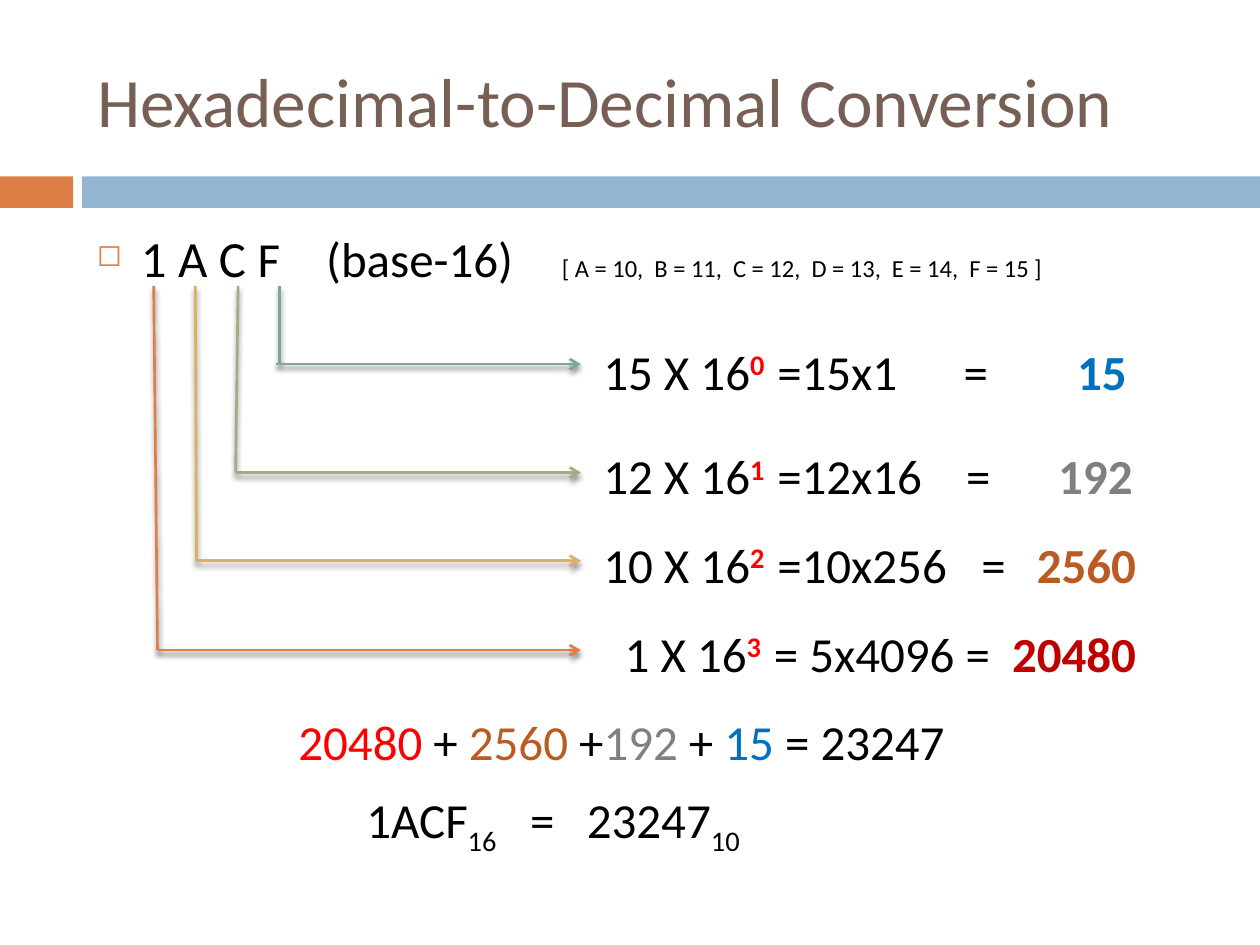
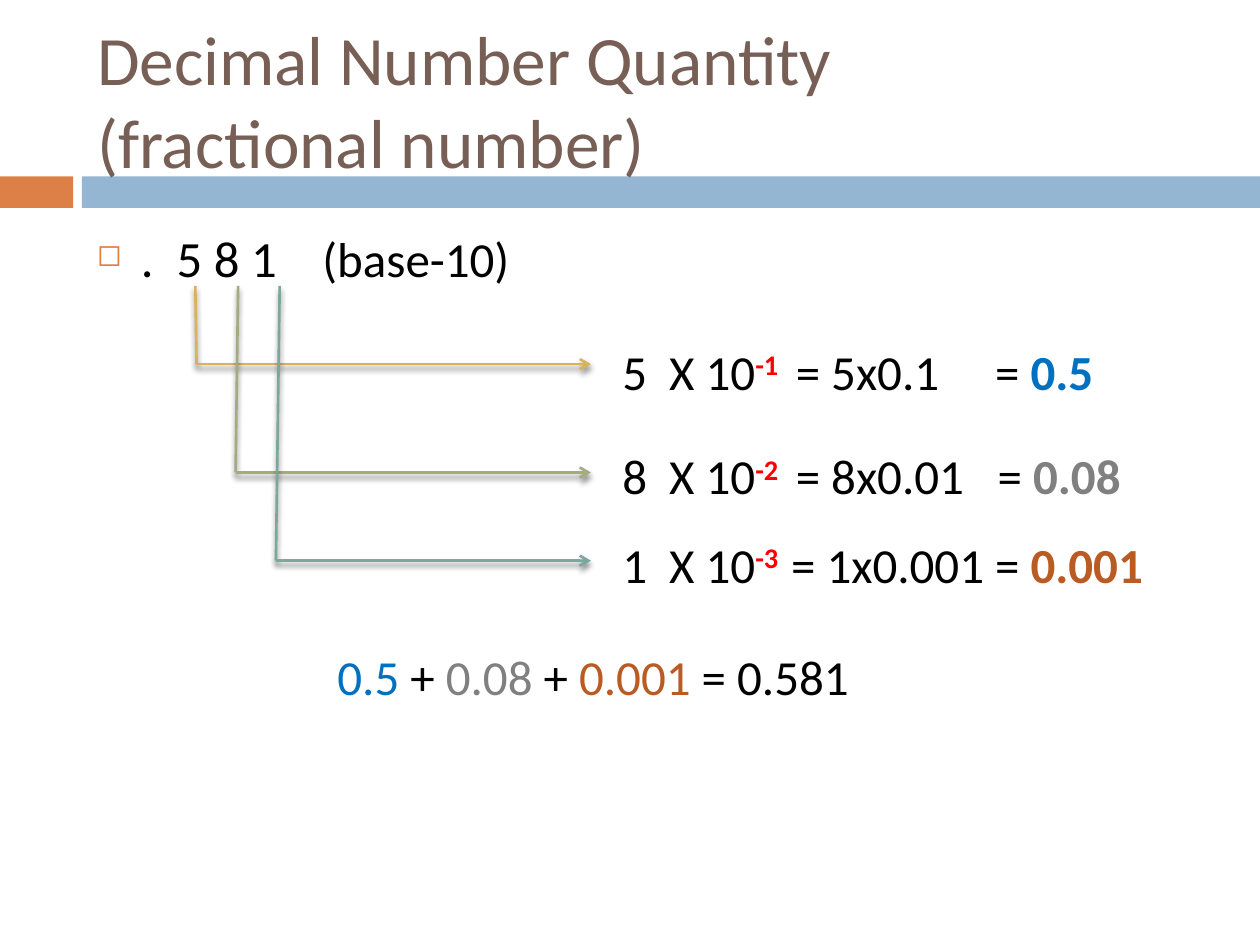
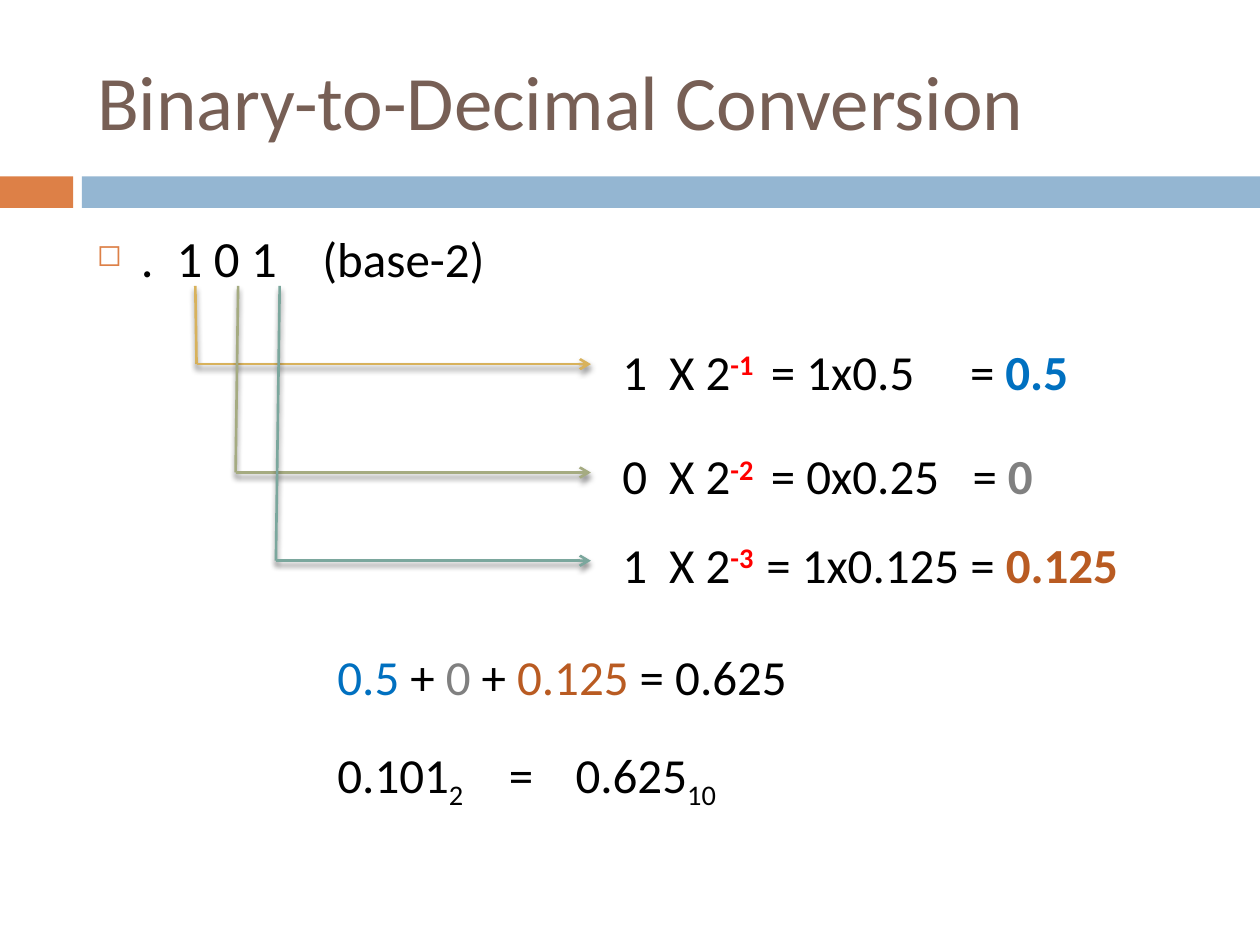
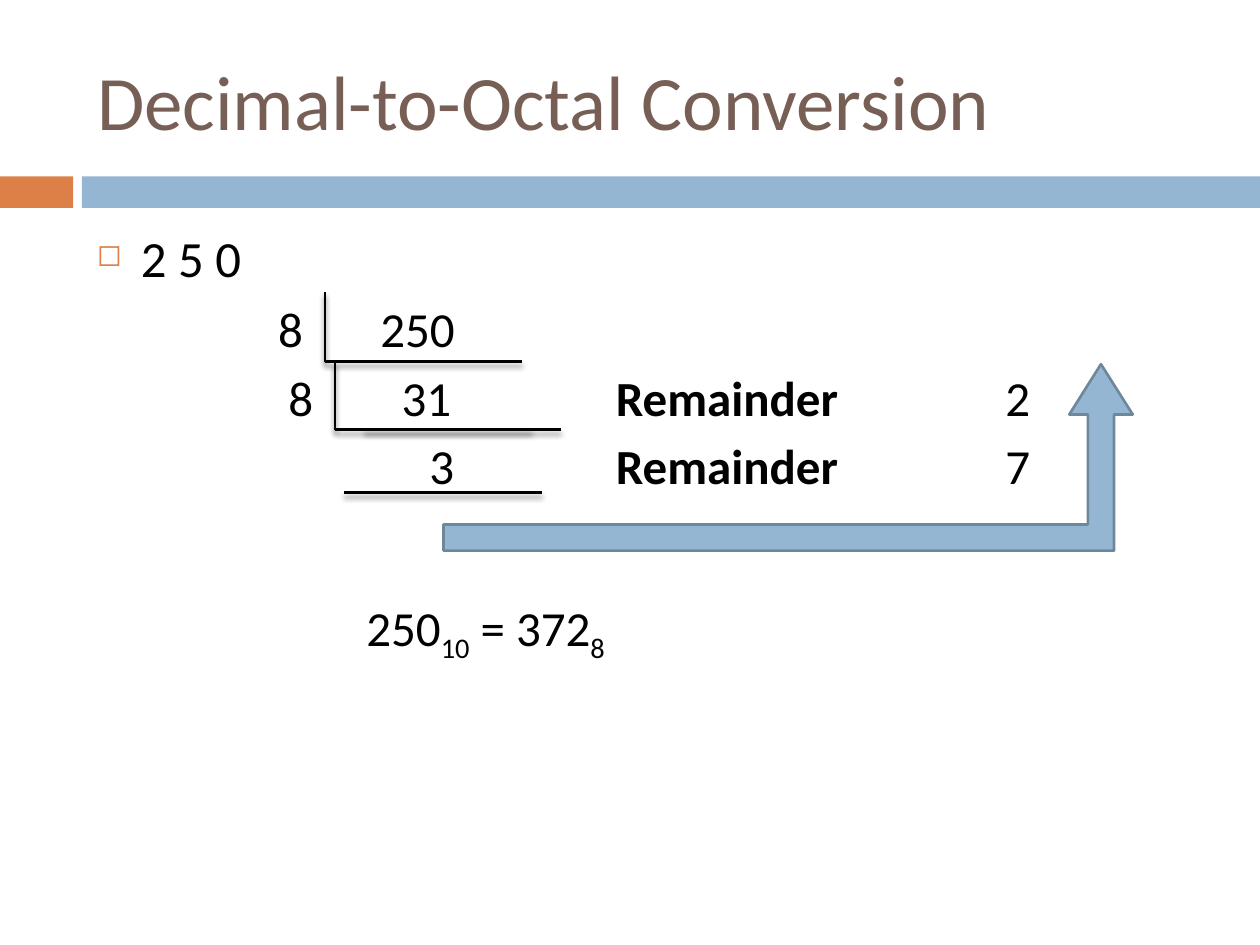
"""Builds four slides on converting numbers between bases."""
from dataclasses import dataclass
from typing import Any, NamedTuple

import lxml.etree
import pptx
import pptx.dml.color
import pptx.enum.shapes
import pptx.enum.text
import pptx.oxml.ns
import pptx.util

Inches = pptx.util.Inches
Pt = pptx.util.Pt
SHAPES = pptx.enum.shapes.MSO_SHAPE
FIT = pptx.enum.text.MSO_AUTO_SIZE


@dataclass(frozen=True)
class Theme:
    font: str = "Calibri"
    title: str = "775F55"
    ink: str = "000000"
    orange: str = "DD8047"
    blue: str = "94B6D2"
    blue_edge: str = "6D879B"
    gold: str = "D8B25C"
    olive: str = "A5AB81"
    teal: str = "7BA79D"
    power: str = "FF0000"
    azure: str = "0070C0"
    gray: str = "808080"
    rust: str = "B95B22"
    crimson: str = "C00000"
    title_size: float = 44
    title_fitted: float = 39.6
    digits_size: float = 29
    text_size: float = 28
    note_size: float = 14
    line_width: float = 1.5


THEME = Theme()


class Span(NamedTuple):
    text: str
    color: str = THEME.ink
    bold: bool = False
    baseline: int = 0
    size: float = THEME.text_size


class Block(NamedTuple):
    left: float
    top: float
    width: float
    spans: list[Span]
    tabs: tuple[float, ...] = ()
    indent: float = 0
    height: float = 0.57


class Column(NamedTuple):
    color: str
    head: float
    foot: float
    overhang: float = 0


class Level(NamedTuple):
    line: float
    text: float


class Term(NamedTuple):
    column: Column
    factor: str
    power: str
    product: str
    result: str
    color: str
    tabs: tuple[float, ...] = ()
    shift: float = 0


class Segment(NamedTuple):
    start: tuple[float, float]
    end: tuple[float, float]


ORANGE = Column(THEME.orange, 1.22, 1.25)
GOLD = Column(THEME.gold, 1.55, 1.56)
OLIVE = Column(THEME.olive, 1.89, 1.87)
TEAL = Column(THEME.teal, 2.22, 2.19)
TEAL_UPRIGHT = TEAL._replace(foot=2.22, overhang=0.03)
LEVELS = (Level(2.89, 2.66), Level(3.75, 3.49), Level(4.45, 4.19), Level(5.16, 4.9))
COLUMN_TOP = 2.27


def assign(target: Any, values: dict[str, Any]) -> None:
    """Set each named attribute of the target."""
    for name, value in values.items():
        setattr(target, name, value)


def rgb(color: str) -> pptx.dml.color.RGBColor:
    """Turn a hex string into a colour."""
    return pptx.dml.color.RGBColor.from_string(color)


def child(parent: Any, tag: str, **attributes: Any) -> Any:
    """Append a DrawingML element to its parent."""
    values = {name: str(value) for name, value in attributes.items()}
    return lxml.etree.SubElement(parent, pptx.oxml.ns.qn(f"a:{tag}"), values)


def write(para: Any, spans: list[Span]) -> None:
    """Write formatted spans into a paragraph."""
    for part in spans:
        span = para.add_run()
        span.text = part.text
        assign(span.font, {"name": THEME.font, "size": Pt(part.size), "bold": part.bold})
        span.font.color.rgb = rgb(part.color)
        if part.baseline:
            span.font._element.set("baseline", str(part.baseline * 1000))


def add_tabs(para: Any, tabs: tuple[float, ...]) -> None:
    """Give a paragraph left tab stops."""
    if tabs:
        stops = child(para._p.get_or_add_pPr(), "tabLst")
        for position in tabs:
            child(stops, "tab", pos=Inches(position), algn="l")


def add_block(page: Any, block: Block) -> None:
    """Add a one-paragraph text box."""
    box = page.shapes.add_textbox(*map(Inches, (block.left, block.top, block.width, block.height)))
    assign(box.text_frame, {"word_wrap": True, "auto_size": FIT.SHAPE_TO_FIT_TEXT})
    para = box.text_frame.paragraphs[0]
    if block.indent:
        para._p.get_or_add_pPr().set("marL", str(Inches(block.indent)))
    add_tabs(para, block.tabs)
    write(para, block.spans)


def add_heading(page: Any, spans: list[Span], tabs: tuple[float, ...] = ()) -> None:
    """Add the bulleted number that the slide works on."""
    box = page.shapes.add_textbox(Inches(0.67), Inches(1.75), Inches(8.92), Inches(4.92))
    assign(box.text_frame, {"word_wrap": True, "auto_size": FIT.NONE})
    para = box.text_frame.paragraphs[0]
    para.space_before = Pt(7)
    properties = para._p.get_or_add_pPr()
    properties.set("marL", str(Inches(0.35)))
    properties.set("indent", str(-Inches(0.35)))
    child(child(properties, "buClr"), "srgbClr", val=THEME.orange)
    child(properties, "buSzPct", val=60000)
    child(properties, "buChar", char="◻")
    add_tabs(para, tabs)
    write(para, spans)


def add_line(page: Any, segment: Segment, color: str = THEME.ink, arrow: bool = False) -> None:
    """Add a line with a soft shadow below it."""
    line = page.shapes.add_connector(
        pptx.enum.shapes.MSO_CONNECTOR.STRAIGHT, *map(Inches, segment.start + segment.end))
    line.line.width = Pt(THEME.line_width)
    line.line.color.rgb = rgb(color)
    if arrow:
        child(line.line._get_or_add_ln(), "tailEnd", type="arrow")
    effects = child(line._element.spPr, "effectLst")
    shadow = child(effects, "outerShdw", blurRad=Pt(3), dist=Pt(2.4), dir=5400000, rotWithShape=0)
    child(child(shadow, "srgbClr", val=THEME.ink), "alpha", val=45000)


def add_terms(page: Any, terms: list[Term], arrow_end: float, left: float, width: float) -> None:
    """Lead each digit to its weighted product."""
    for term, level in zip(terms, LEVELS):
        column = term.column
        foot = (column.foot, level.line)
        add_line(page, Segment((column.head, COLUMN_TOP), foot), column.color)
        elbow = (column.foot - column.overhang, level.line)
        add_line(page, Segment(elbow, (arrow_end, level.line)), column.color, arrow=True)
        spans = [Span(term.factor), Span(term.power, THEME.power, True, 30),
                 Span(term.product), Span(term.result, term.color, True)]
        add_block(page, Block(left + term.shift, level.text, width - term.shift, spans, term.tabs))


def add_fraction(page: Any, terms: list[Term], total: str) -> None:
    """Add the terms of a fraction and their coloured sum."""
    add_terms(page, terms, 4.69, 4.84, 4.92)
    spans: list[Span] = []
    for term in terms:
        spans += [Span(term.result, term.color), Span(" + ")]
    spans[-1] = Span(f" = {total}")
    add_block(page, Block(2.58, 5.08, 5.86, spans))


def add_bands(page: Any, layout: Any) -> None:
    """Place the two bands in the layout, behind all slides."""
    for index, (left, width, color) in enumerate(
            [(0, 0.58, THEME.orange), (0.65, 9.35, THEME.blue)]):
        band = page.shapes.add_shape(
            SHAPES.RECTANGLE, Inches(left), Inches(1.4), Inches(width), Inches(0.25))
        band.shadow.inherit = False
        band.fill.solid()
        band.fill.fore_color.rgb = rgb(color)
        band.line.fill.background()
        layout.shapes.element.insert(2 + index, band.element)


def add_page(deck: Any, title: str, size: float = THEME.title_size) -> Any:
    """Add a slide with a formatted title."""
    page = deck.slides.add_slide(deck.slide_layouts[5])
    box = page.shapes.title
    assign(box, {"left": Inches(0.67), "top": Inches(0.25),
                 "width": Inches(8.92), "height": Inches(1.08)})
    assign(box.text_frame, {"text": title, "word_wrap": True, "auto_size": FIT.NONE,
                            "vertical_anchor": pptx.enum.text.MSO_ANCHOR.MIDDLE})
    para = box.text_frame.paragraphs[0]
    para.alignment = pptx.enum.text.PP_ALIGN.LEFT
    for span in para.runs:
        assign(span.font, {"name": THEME.font, "size": Pt(size)})
        span.font.color.rgb = rgb(THEME.title)
    return page


def build_hexadecimal(deck: Any) -> None:
    """Build the hexadecimal-to-decimal slide."""
    page = add_page(deck, "Hexadecimal-to-Decimal Conversion", THEME.title_fitted)
    add_bands(page, deck.slide_layouts[5])
    add_heading(page, [
        Span("1 A C ", size=THEME.digits_size), Span("F\t(base-16)\t"),
        Span("[ A = 10,  B = 11,  C = 12,  D = 13,  E = 14,  F = 15 ]", size=THEME.note_size),
    ], (1.82, 3.69))
    add_terms(page, [
        Term(TEAL_UPRIGHT, "15 X 16", "0  ", "=15x1\t=\t", "15", THEME.azure, (2.86, 3.76)),
        Term(OLIVE, "12 X 16", "1  ", "=12x16\t=\t", "192", THEME.gray, (2.88, 3.61)),
        Term(GOLD, "10 X 16", "2  ", "=10x256\t=\t", "2560", THEME.rust, (3.0, 3.44)),
        Term(ORANGE, "1 X 16", "3  ", "= 5x4096 =  ", "20480", THEME.crimson, shift=0.17),
    ], 4.61, 4.69, 5.08)
    add_block(page, Block(2.27, 5.6, 6.72, [
        Span("20480", THEME.power), Span(" + "), Span("2560", THEME.rust), Span(" +"),
        Span("192", THEME.gray), Span(" + "), Span("15", THEME.azure), Span(" = 23247")]))
    add_block(page, Block(2.81, 6.22, 5.86, [
        Span("1ACF"), Span("16", baseline=-25), Span("\t=\t23247"),
        Span("10", baseline=-25)], (1.3, 1.75)))


def build_decimal_fraction(deck: Any) -> None:
    """Build the decimal fraction slide."""
    page = add_page(deck, "Decimal Number Quantity \v(fractional number)", THEME.title_fitted)
    add_heading(page, [Span(".  5 8 1", size=THEME.digits_size), Span("\t(base-10)")], (1.79,))
    add_fraction(page, [
        Term(GOLD, "5  X 10", "-1 ", " = 5x0.1\t= ", "0.5", THEME.azure, (2.96,)),
        Term(OLIVE, "8  X 10", "-2 ", " = 8x0.01\t= ", "0.08", THEME.gray, (2.98,)),
        Term(TEAL, "1  X 10", "-3  ", "= 1x0.001 = ", "0.001", THEME.rust),
    ], "0.581")


def build_binary_fraction(deck: Any) -> None:
    """Build the binary-to-decimal slide."""
    page = add_page(deck, "Binary-to-Decimal Conversion")
    add_heading(page, [Span(".  1 0 1", size=THEME.digits_size), Span("\t(base-2)")], (1.79,))
    add_fraction(page, [
        Term(GOLD, "1  X 2", "-1 ", " = 1x0.5\t= ", "0.5", THEME.azure, (2.76,)),
        Term(OLIVE, "0  X 2", "-2 ", " = 0x0.25\t= ", "0", THEME.gray, (2.78,)),
        Term(TEAL, "1  X 2", "-3  ", "= 1x0.125 = ", "0.125", THEME.rust),
    ], "0.625")
    add_block(page, Block(2.58, 5.86, 5.86, [
        Span("0.101"), Span("2", baseline=-25), Span("\t=\t0.625"),
        Span("10", baseline=-25)], (1.36, 1.89)))


def build_octal(deck: Any) -> None:
    """Build the decimal-to-octal slide."""
    page = add_page(deck, "Decimal-to-Octal Conversion")
    add_heading(page, [Span("2 5 0", size=THEME.digits_size)])
    for segment in (
            Segment((2.58, 2.32), (2.58, 2.87)), Segment((2.58, 2.87), (4.14, 2.87)),
            Segment((2.66, 2.87), (2.66, 3.41)), Segment((2.66, 3.41), (4.22, 3.41)),
            Segment((2.89, 3.41), (4.45, 3.41)), Segment((2.73, 3.91), (4.3, 3.91))):
        add_line(page, segment)
    for block in (
            Block(2.11, 2.32, 0.55, [Span("8")]),
            Block(2.73, 2.32, 1.56, [Span("250")], indent=0.19),
            Block(2.19, 2.87, 0.47, [Span("8")]),
            Block(2.73, 2.87, 1.17, [Span("31")], indent=0.36),
            Block(3.05, 3.41, 1.17, [Span("3")], indent=0.26)):
        add_block(page, block)
    for top, remainder in ((2.87, "2"), (3.41, "7")):
        add_block(page, Block(4.79, top, 3.57, [
            Span("Remainder", bold=True), Span(f"\t{remainder}")], (3.09,)))
    arrow = page.shapes.add_shape(
        SHAPES.BENT_UP_ARROW, Inches(3.52), Inches(2.89), Inches(5.47), Inches(1.48))
    arrow.shadow.inherit = False
    arrow.fill.solid()
    arrow.fill.fore_color.rgb = rgb(THEME.blue)
    arrow.line.color.rgb = rgb(THEME.blue_edge)
    arrow.line.width = Pt(THEME.line_width)
    for index, value in enumerate((0.14, 0.17, 0.27)):
        arrow.adjustments[index] = value
    add_block(page, Block(2.81, 4.69, 4.69, [
        Span("250"), Span("10", baseline=-25), Span(" = 372"), Span("8", baseline=-25)]))


def main() -> None:
    """Build and save the deck."""
    deck = pptx.Presentation()
    assign(deck, {"slide_width": Inches(10), "slide_height": Inches(7.5)})
    build_hexadecimal(deck)
    build_decimal_fraction(deck)
    build_binary_fraction(deck)
    build_octal(deck)
    deck.save("out.pptx")


if __name__ == "__main__":
    main()
